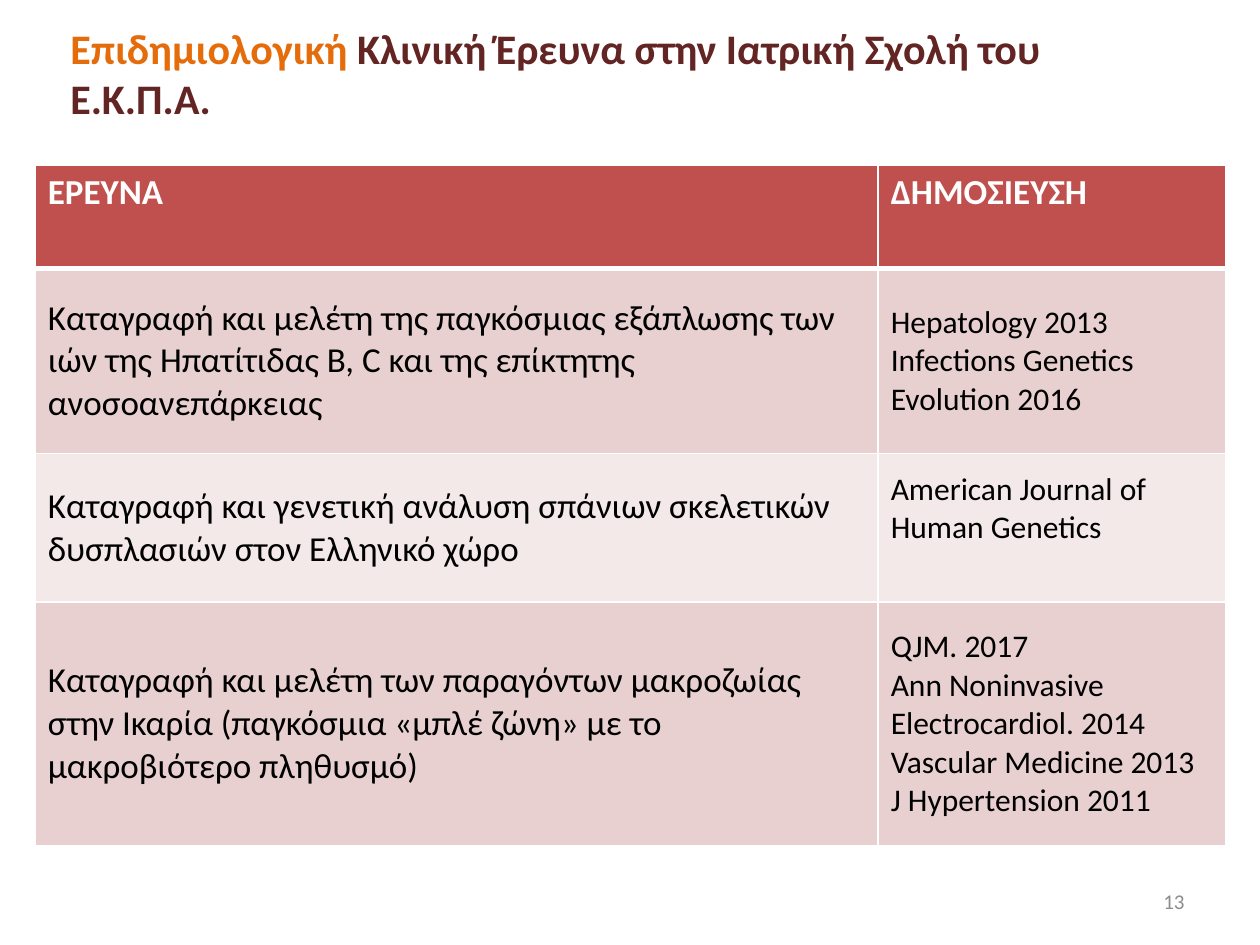
from lxml import etree
from pptx import Presentation
from pptx.dml.color import RGBColor
from pptx.enum.text import MSO_ANCHOR, PP_ALIGN
from pptx.oxml.ns import qn
from pptx.util import Inches, Pt

TOP, MIDDLE = MSO_ANCHOR.TOP, MSO_ANCHOR.MIDDLE
LEFT, RIGHT = PP_ALIGN.LEFT, PP_ALIGN.RIGHT


def add_text(paragraph, text, size=18, color="000000", bold=False, align=LEFT):
    paragraph.alignment = align
    run = paragraph.add_run()
    run.text = text
    run.font.name = "Calibri"
    run.font.size = Pt(size)
    run.font.bold = bold
    run.font.color.rgb = RGBColor.from_string(color)


def set_border(cell, side, width, color="FFFFFF"):
    properties = cell._tc.get_or_add_tcPr()
    line = etree.SubElement(properties, qn(f"a:ln{side}"), w=str(Pt(width)))
    fill = etree.SubElement(line, qn("a:solidFill"))
    etree.SubElement(fill, qn("a:srgbClr"), val=color)


presentation = Presentation()
presentation.slide_width = Inches(10)
presentation.slide_height = Inches(7.5)
slide = presentation.slides.add_slide(presentation.slide_layouts[6])

# Title
title = slide.shapes.add_textbox(Inches(0.46), Inches(0.13), Inches(9), Inches(0.9))
title.text_frame.word_wrap = True
title_paragraph = title.text_frame.paragraphs[0]
add_text(title_paragraph, "Επιδημιολογική", size=24, color="E46C0A", bold=True)
add_text(title_paragraph, " Κλινική Έρευνα στην Ιατρική Σχολή του Ε.Κ.Π.Α.",
         size=24, color="632523", bold=True)

# Table of studies and their publications, one list of paragraphs per cell
rows = [
    (["ΕΡΕΥΝΑ"], ["ΔΗΜΟΣΙΕΥΣΗ"]),
    (["Καταγραφή και μελέτη της παγκόσμιας εξάπλωσης των ιών της Ηπατίτιδας Β, C "
      "και της επίκτητης ανοσοανεπάρκειας"],
     ["Hepatology 2013", "Infections Genetics Evolution 2016"]),
    (["Καταγραφή και γενετική ανάλυση σπάνιων σκελετικών δυσπλασιών στον Ελληνικό χώρο"],
     ["American Journal of Human Genetics"]),
    (["Καταγραφή και μελέτη των παραγόντων μακροζωίας στην Ικαρία "
      "(παγκόσμια «μπλέ ζώνη» με το μακροβιότερο πληθυσμό)"],
     ["QJM. 2017", "Ann Noninvasive Electrocardiol. 2014",
      "Vascular Medicine 2013", "J Hypertension 2011"]),
]
column_widths = [6.69, 2.76]
row_heights = [0.82, 1.47, 1.18, 1.93]
row_fills = ["C0504D", "E8D0D0", "F4E9E9", "E8D0D0"]

table = slide.shapes.add_table(
    len(rows), len(column_widths), Inches(0.28), Inches(1.31),
    Inches(sum(column_widths)), Inches(sum(row_heights))).table
for column, width in zip(table.columns, column_widths):
    column.width = Inches(width)

for row_index, row in enumerate(rows):
    table.rows[row_index].height = Inches(row_heights[row_index])
    is_header = row_index == 0
    for column_index, lines in enumerate(row):
        cell = table.cell(row_index, column_index)
        for side in "LRTB":
            thick = (is_header and side == "B") or (row_index == 1 and side == "T")
            set_border(cell, side, 3 if thick else 1)
        cell.fill.solid()
        cell.fill.fore_color.rgb = RGBColor.from_string(row_fills[row_index])
        cell.vertical_anchor = TOP if is_header else MIDDLE
        for line_index, text in enumerate(lines):
            frame = cell.text_frame
            paragraph = frame.paragraphs[0] if line_index == 0 else frame.add_paragraph()
            add_text(paragraph, text, bold=is_header,
                     size=20 if is_header or column_index == 0 else 18,
                     color="FFFFFF" if is_header else "000000")

# The journal name sits one line above the foot of its cell
table.cell(2, 1).margin_bottom = Inches(0.35)

# Slide number
number = slide.shapes.add_textbox(Inches(7.17), Inches(6.95), Inches(2.33), Inches(0.4))
number.text_frame.word_wrap = True
number.text_frame.vertical_anchor = MIDDLE
add_text(number.text_frame.paragraphs[0], "13", size=12, color="8C8C8C", align=RIGHT)

presentation.save("out.pptx")
